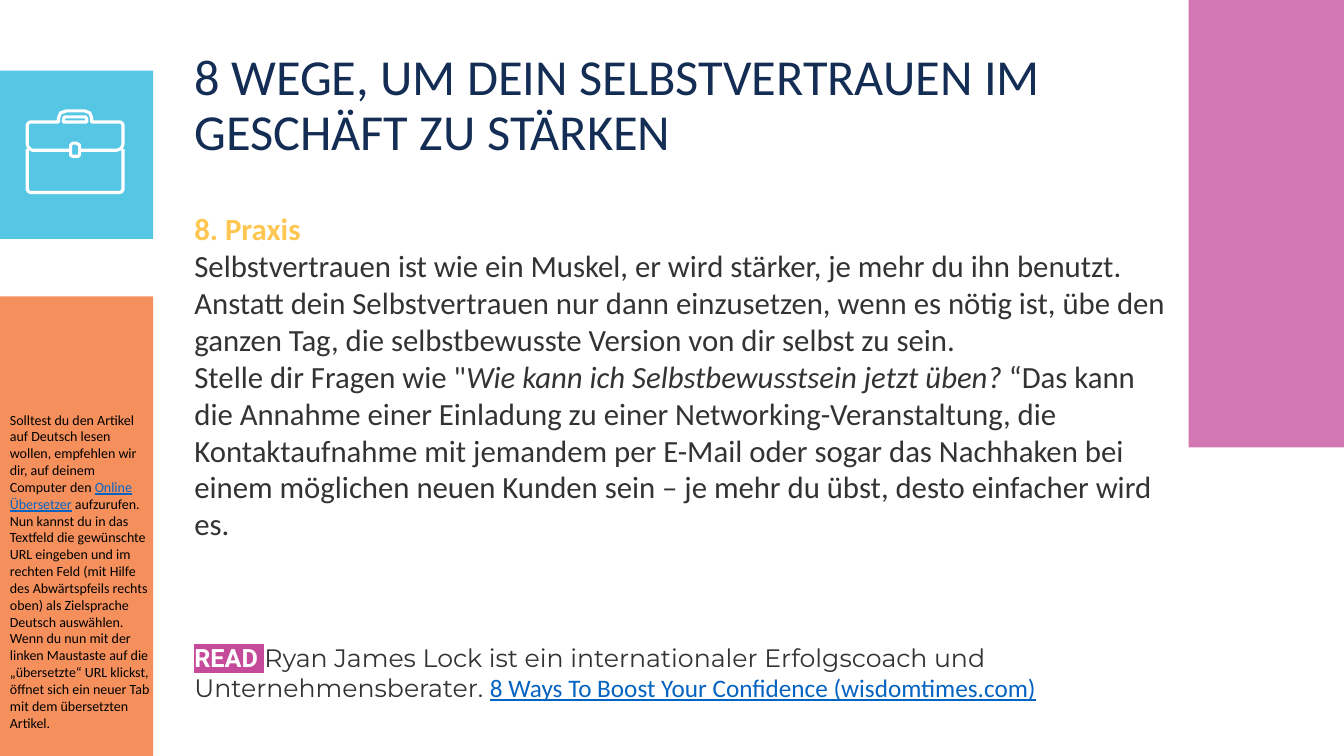
from lxml import etree
from pptx import Presentation
from pptx.dml.color import RGBColor
from pptx.enum.shapes import MSO_SHAPE
from pptx.oxml.ns import qn
from pptx.util import Inches, Pt

PINK, WHITE, GREY, BLUE = "C54A9A", "FFFFFF", "333333", "0563C1"
LINK = {"color": BLUE, "underline": True}

PANELS = [
    (-0.04, 2.94, 4.56, "F26B27"),
    (-0.04, 0.7, 1.67, "1EB3DD"),
    (11.79, 0, 4.44, PINK),
]
PANEL_WIDTH = 1.56
PANEL_ALPHA = 75

FLAP = [
    (119, 121), (91, 121), (91, 117), (89, 112), (84, 110), (66, 110),
    (60, 112), (58, 117), (58, 121), (30, 121), (28, 122), (27, 124),
    (27, 143), (28, 146), (30, 148), (32, 149), (70, 149), (70, 144),
    (72, 142), (76, 142), (79, 144), (79, 149), (116, 149), (119, 148),
    (121, 146), (122, 143), (122, 124), (121, 122),
]
HANDLE = [(86, 121), (63, 121), (63, 118), (64, 116), (66, 116),
          (83, 116), (85, 116), (86, 118)]
CLASP = [(79, 150), (79, 153), (78, 155), (76, 155), (72, 155),
         (70, 154), (70, 150)]
CASE = [(27, 148), (27, 188), (28, 190), (30, 191), (119, 191),
        (121, 190), (122, 188), (122, 148)]
BRIEFCASE = [([FLAP, HANDLE], True), ([CLASP], False), ([CASE], False)]

TEXTS = [
    ((1.83, 2.03, 9.96, 3.8), {"size": 22, "name": "Calibri"}, [
        ({"color": "FFC652", "bold": True}, [("8. Praxis", {})]),
        ({"color": GREY}, [
            ("Selbstvertrauen ist wie ein Muskel, er wird stärker, je mehr du "
             "ihn benutzt. Anstatt dein Selbstvertrauen nur dann einzusetzen, "
             "wenn es nötig ist, übe den ganzen Tag, die selbstbewusste "
             "Version von dir selbst zu sein.", {})]),
        ({"color": GREY}, [
            ('Stelle dir Fragen wie "', {}),
            ("Wie kann ich Selbstbewusstsein jetzt üben? ", {"italic": True}),
            ("“Das kann die Annahme einer Einladung zu einer "
             "Networking-Veranstaltung, die Kontaktaufnahme mit jemandem per "
             "E-Mail oder sogar das Nachhaken bei einem möglichen neuen Kunden "
             "sein – je mehr du übst, desto einfacher wird es.", {})]),
    ]),
    ((1.83, 6.32, 8.57, 0.71), {"size": 18}, [
        ({}, [
            ("READ ", {"name": "Roboto", "color": WHITE, "bold": True,
                       "highlight": PINK}),
            ("Ryan James Lock ist ein internationaler Erfolgscoach und "
             "Unternehmensberater. ", {"name": "Montserrat", "color": GREY}),
            ("8 Ways To Boost Your Confidence (wisdomtimes.com)",
             {"name": "Calibri", **LINK})]),
    ]),
    ((1.83, 0.47, 10.08, 1.14), {"size": 36, "name": "Calibri"}, [
        ({"color": "142D55", "spacing": 0.9}, [
            ("8 WEGE, UM DEIN SELBSTVERTRAUEN IM GESCHÄFT ZU STÄRKEN", {})]),
    ]),
    ((0, 4.03, 1.58, 3.8), {"size": 10, "name": "Calibri"}, [
        ({"color": "000000"}, [
            ("Solltest du den Artikel auf Deutsch lesen wollen, empfehlen wir "
             "dir, auf deinem Computer den ", {}),
            ("Online Übersetzer", LINK),
            (" aufzurufen. Nun kannst du in das Textfeld die gewünschte URL "
             "eingeben und im rechten Feld (mit Hilfe des Abwärtspfeils rechts "
             "oben) als Zielsprache Deutsch auswählen. Wenn du nun mit der "
             "linken Maustaste auf die „übersetzte“ URL klickst, öffnet sich "
             "ein neuer Tab mit dem übersetzten Artikel.", {})]),
    ]),
]


def rgb(value):
    return RGBColor.from_string(value)


def style_font(font, style):
    for key in ("name", "bold", "italic", "underline"):
        if key in style:
            setattr(font, key, style[key])
    if "size" in style:
        font.size = Pt(style["size"])
    if "color" in style:
        font.color.rgb = rgb(style["color"])


def add_highlight(r, value):
    highlight = etree.Element(qn("a:highlight"))
    etree.SubElement(highlight, qn("a:srgbClr"), val=value)
    r._r.rPr.find(qn("a:solidFill")).addnext(highlight)


def add_panel(slide, left, top, height, color):
    sp = slide.shapes.add_shape(MSO_SHAPE.RECTANGLE, Inches(left), Inches(top),
                                Inches(PANEL_WIDTH), Inches(height))
    sp.shadow.inherit = False
    sp.fill.solid()
    sp.fill.fore_color.rgb = rgb(color)
    sp.line.fill.background()
    clr = sp._element.spPr.find(qn("a:solidFill")).find(qn("a:srgbClr"))
    etree.SubElement(clr, qn("a:alpha"), val=str(PANEL_ALPHA * 1000))


def add_outline(slide, contours, close):
    first, *others = contours
    builder = slide.shapes.build_freeform(*first[0], scale=Inches(0.01))
    builder.add_line_segments(first[1:], close=close)
    for contour in others:
        builder.move_to(*contour[0])
        builder.add_line_segments(contour[1:], close=close)
    sp = builder.convert_to_shape()
    sp.shadow.inherit = False
    sp.fill.background()
    sp.line.color.rgb = rgb(WHITE)
    sp.line.width = Pt(2.25)


def add_text(slide, box, base, paragraphs):
    tf = slide.shapes.add_textbox(*map(Inches, box)).text_frame
    tf.word_wrap = True
    for i, (style, runs) in enumerate(paragraphs):
        p = tf.add_paragraph() if i else tf.paragraphs[0]
        style_font(p.font, {**base, **style})
        if "spacing" in style:
            p.line_spacing = style["spacing"]
        for text, own in runs:
            r = p.add_run()
            r.text = text
            style_font(r.font, own)
            if "highlight" in own:
                add_highlight(r, own["highlight"])


def main():
    prs = Presentation()
    prs.slide_width, prs.slide_height = Inches(13.33), Inches(7.5)
    slide = prs.slides.add_slide(prs.slide_layouts[6])
    for panel in PANELS:
        add_panel(slide, *panel)
    for contours, close in BRIEFCASE:
        add_outline(slide, contours, close)
    for text in TEXTS:
        add_text(slide, *text)
    prs.save("out.pptx")


if __name__ == "__main__":
    main()
